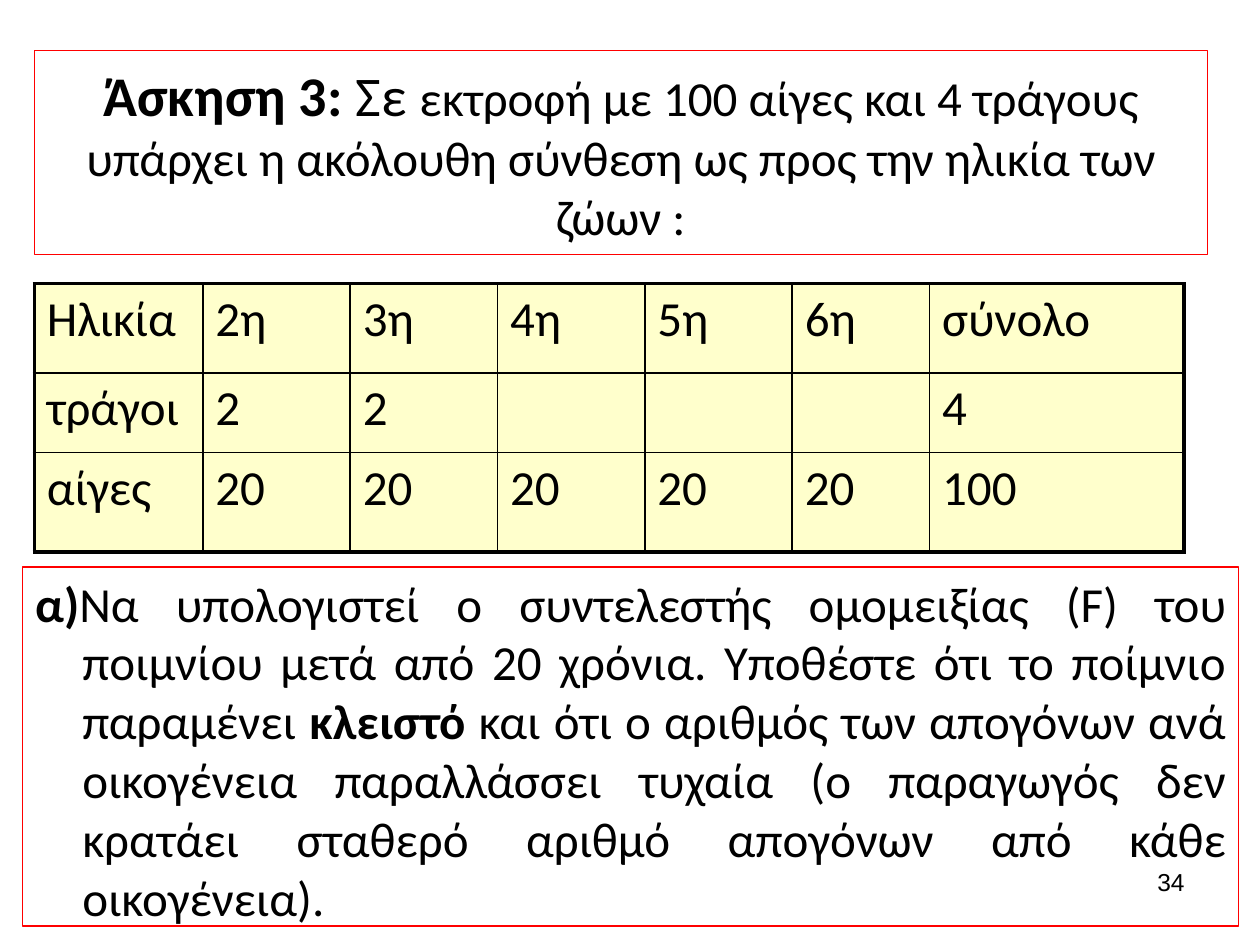
import lxml.etree
import pptx
import pptx.dml.color
import pptx.enum.shapes
import pptx.enum.text
import pptx.oxml.ns
import pptx.util

Cm, Pt = pptx.util.Cm, pptx.util.Pt
ALIGN = pptx.enum.text.PP_ALIGN
ANCHOR = pptx.enum.text.MSO_ANCHOR
qn = pptx.oxml.ns.qn


def rgb(color):
    """Turn a hex string into a colour."""
    return pptx.dml.color.RGBColor.from_string(color)


def add_run(p, text, size=28, bold=False, font="Calibri"):
    """Append one black run to a paragraph."""
    r = p.add_run()
    r.text = text
    r.font.name = font
    r.font.size = Pt(size)
    r.font.bold = bold
    r.font.color.rgb = rgb("000000")


def add_frame(s, box, align, anchor):
    """Add a red outlined rectangle and return its first paragraph."""
    sp = s.shapes.add_shape(pptx.enum.shapes.MSO_SHAPE.RECTANGLE, *map(Cm, box))
    sp.shadow.inherit = False
    sp.fill.background()
    sp.line.color.rgb = rgb("FF0000")
    sp.line.width = Pt(0.75)
    tf = sp.text_frame
    tf.word_wrap = True
    tf.vertical_anchor = anchor
    p = tf.paragraphs[0]
    p.alignment = align
    return p


def add_title(s, box):
    """Place the statement of the exercise."""
    p = add_frame(s, box, ALIGN.CENTER, ANCHOR.MIDDLE)
    add_run(p, "Άσκηση 3:", 32, True)
    add_run(p, " Σε ", 32)
    add_run(p, "εκτροφή με 100 αίγες και 4 τράγους υπάρχει η ακόλουθη "
               "σύνθεση ως προς την ηλικία των ζώων :")


def add_question(s, box):
    """Place the justified question with a hanging indent."""
    p = add_frame(s, box, ALIGN.JUSTIFY, ANCHOR.TOP)
    pPr = p._p.get_or_add_pPr()
    pPr.set("marL", str(Cm(0.95)))
    pPr.set("indent", str(Cm(-0.95)))
    add_run(p, "α)", bold=True)
    add_run(p, "Nα υπολογιστεί ο συντελεστής oμομειξίας (F) του ποιμνίου μετά "
               "από 20 χρόνια. Υποθέστε ότι το ποίμνιο παραμένει ")
    add_run(p, "κλειστό", bold=True)
    add_run(p, " και ότι ο αριθμός των απογόνων ανά οικογένεια παραλλάσσει "
               "τυχαία (ο παραγωγός δεν κρατάει σταθερό αριθμό απογόνων από "
               "κάθε οικογένεια).")


def set_borders(cell, outer):
    """Draw black cell borders, thick on the outer sides."""
    tcPr = cell._tc.get_or_add_tcPr()
    for i, side in enumerate("LRTB"):
        width = Pt(2.25 if side in outer else 1)
        ln = lxml.etree.Element(qn("a:ln" + side), w=str(width))
        fill = lxml.etree.SubElement(ln, qn("a:solidFill"))
        lxml.etree.SubElement(fill, qn("a:srgbClr"), val="000000")
        tcPr.insert(i, ln)


def add_age_table(s, box):
    """Place the table of animals by age."""
    rows = [
        ["Ηλικία", "2η", "3η", "4η", "5η", "6η", "σύνολο"],
        ["τράγοι", "2", "2", "", "", "", "4"],
        ["αίγες"] + ["20"] * 5 + ["100"],
    ]
    widths = [3.4] + [2.97] * 4 + [2.77, 5.13]
    heights = [1.8, 1.6, 2.01]
    last_row, last_col = len(heights) - 1, len(widths) - 1
    table = s.shapes.add_table(len(heights), len(widths), *map(Cm, box)).table
    for col, width in zip(table.columns, widths):
        col.width = Cm(width)
    for i, (row, height) in enumerate(zip(rows, heights)):
        table.rows[i].height = Cm(height)
        for j, text in enumerate(row):
            cell = table.cell(i, j)
            cell.fill.solid()
            cell.fill.fore_color.rgb = rgb("FFFFCC")
            sides = {"L": j == 0, "R": j == last_col, "T": i == 0, "B": i == last_row}
            set_borders(cell, [side for side in sides if sides[side]])
            if text:
                add_run(cell.text_frame.paragraphs[0], text)


def add_page_number(s, box):
    """Place the page number."""
    tf = s.shapes.add_textbox(*map(Cm, box)).text_frame
    tf.word_wrap = True
    p = tf.paragraphs[0]
    p.alignment = ALIGN.RIGHT
    add_run(p, "34", 14, font="Arial")


def main():
    """Build and save the slide."""
    prs = pptx.Presentation()
    prs.slide_width, prs.slide_height = Cm(25.4), Cm(19.05)
    s = prs.slides.add_slide(prs.slide_layouts[6])
    add_page_number(s, (18.21, 17.35, 5.92, 1.32))
    add_title(s, (0.69, 1.02, 23.65, 4.11))
    add_question(s, (0.46, 11.43, 24.51, 7.24))
    add_age_table(s, (0.69, 5.72, 23.18, 5.41))
    prs.save("out.pptx")


if __name__ == "__main__":
    main()
